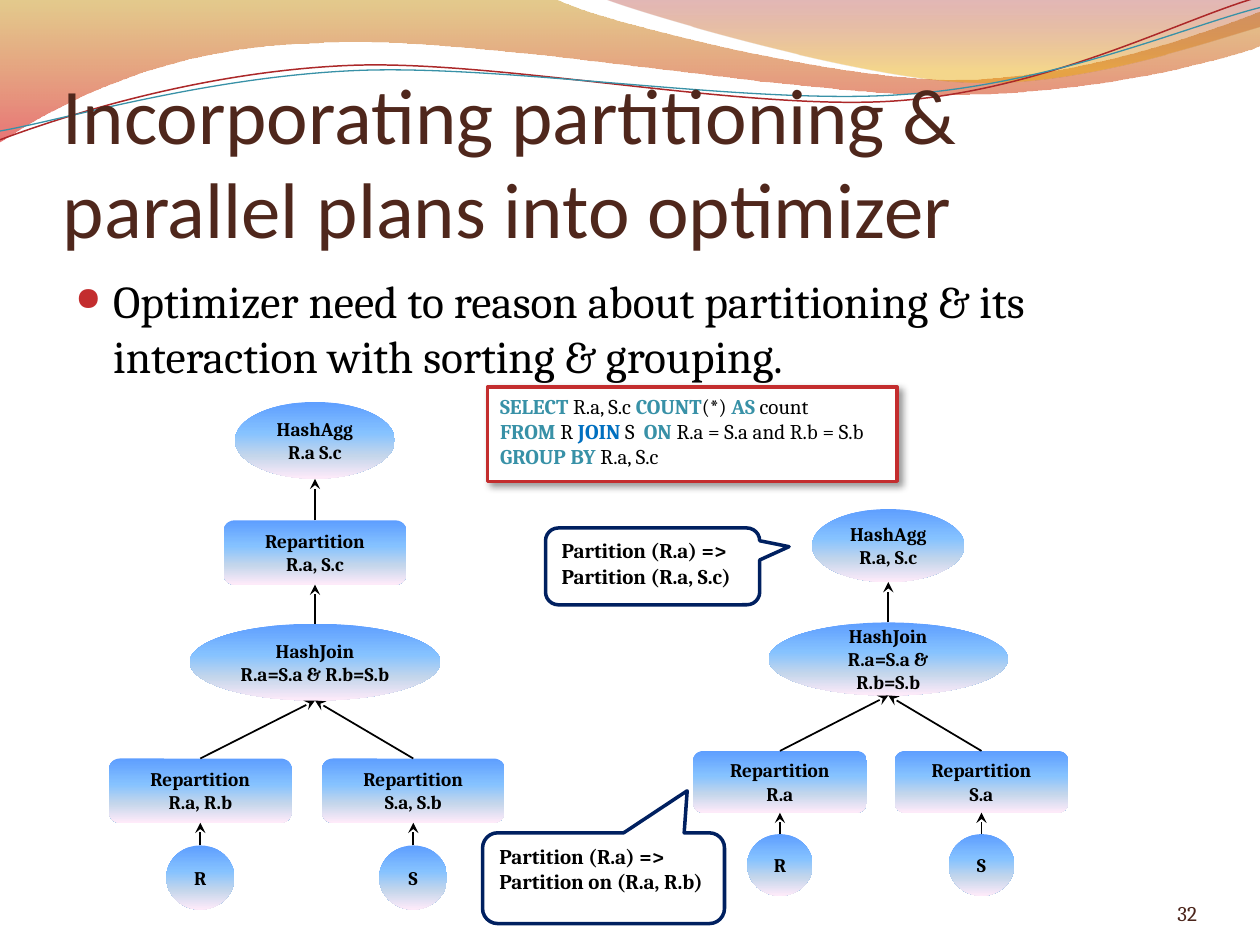
from lxml.etree import SubElement
from pptx import Presentation
from pptx.dml.color import RGBColor
from pptx.enum.shapes import MSO_CONNECTOR, MSO_SHAPE as SHAPE
from pptx.enum.text import MSO_ANCHOR as ANCHOR, PP_ALIGN as ALIGN
from pptx.oxml.ns import qn
from pptx.util import Inches, Pt

BLACK = RGBColor(0x00, 0x00, 0x00)
WHITE = RGBColor(0xFF, 0xFF, 0xFF)
BROWN = RGBColor(0x4F, 0x27, 0x1C)
DARK_BROWN = RGBColor(0x4B, 0x25, 0x1B)
RED = RGBColor(0xC3, 0x2D, 0x2E)
WAVE_RED = RGBColor(0xAC, 0x28, 0x29)
TEAL = RGBColor(0x38, 0x91, 0xA7)
BLUE = RGBColor(0x00, 0x70, 0xC0)
NAVY = RGBColor(0x00, 0x20, 0x60)
GOLD = RGBColor(0xC3, 0x8B, 0x00)
CRIMSON = RGBColor(0xD6, 0x03, 0x05)
MAROON = RGBColor(0xA1, 0x11, 0x12)
AMBER = RGBColor(0xE9, 0xA6, 0x00)
NODE_STOPS = [
    (0, RGBColor(0x5E, 0x9E, 0xFF), 100),
    (40, RGBColor(0x85, 0xC2, 0xFF), 100),
    (70, RGBColor(0xC4, 0xD6, 0xEB), 100),
    (100, RGBColor(0xFF, 0xEB, 0xFA), 100),
]


def write(shape, text, size=12, font="Cambria", color=BLACK, bold=False,
          accent=None, align=ALIGN.LEFT, anchor=ANCHOR.TOP, insets=(0.1, 0.05, 0.1, 0.05)):
    frame = shape.text_frame
    frame.word_wrap = True
    frame.vertical_anchor = anchor
    (frame.margin_left, frame.margin_top,
     frame.margin_right, frame.margin_bottom) = map(Inches, insets)
    for number, line in enumerate(text.split("\n")):
        paragraph = frame.add_paragraph() if number else frame.paragraphs[0]
        paragraph.alignment = align
        for index, piece in enumerate(line.split("|")):
            if piece:
                run = paragraph.add_run()
                run.text = piece
                run.font.size = Pt(size)
                run.font.name = font
                accented = accent is not None and index % 2 == 1
                run.font.bold = bold or accented
                run.font.color.rgb = accent if accented else color
    return frame


def shade(shape, stops):
    shape.fill.gradient()
    shape.fill.gradient_angle = 270
    stop_list = shape._element.spPr.find(qn("a:gradFill")).find(qn("a:gsLst"))
    for old in list(stop_list):
        stop_list.remove(old)
    for position, color, opacity in stops:
        stop = SubElement(stop_list, qn("a:gs"), pos=str(position * 1000))
        tone = SubElement(stop, qn("a:srgbClr"), val=str(color))
        if opacity < 100:
            SubElement(tone, qn("a:alpha"), val=str(opacity * 1000))


prs = Presentation()
prs.slide_width, prs.slide_height = Inches(10), Inches(7.5)
slide = prs.slides.add_slide(prs.slide_layouts[6])
shapes = slide.shapes

waves = [
    ([(0, 0), (4.4, -0.01), (4.76, 0.17, 6.64, 0.63, 7.58, 0.63),
      (8.53, 0.63, 9.58, 0.26, 10, 0.09), (10.01, 0.36),
      (9.83, 0.44, 8.7, 0.76, 7.46, 0.75), (6.22, 0.75, 3.82, 0.28, 2.57, 0.34),
      (1.29, 0.36, 0.46, 0.83, -0.01, 1.13)], [(0, GOLD, 45), (100, CRIMSON, 55)], None, 0),
    ([(4.79, -0.01), (5.09, 0.11, 6.82, 0.62, 7.69, 0.65),
      (8.56, 0.69, 9.61, 0.32, 10, 0.21), (10, 0)],
     [(0, MAROON, 30), (80, AMBER, 45)], None, 0),
    ([(0, 1.11), (0.48, 0.93, 1.58, 0.57, 2.77, 0.52), (3.95, 0.47, 5.93, 0.89, 7.13, 0.8),
      (8.33, 0.71, 9.38, 0.15, 9.98, -0.02)], None, WAVE_RED, 0.85),
    ([(0, 1.04), (0.47, 0.96, 1.64, 0.61, 2.83, 0.56), (4.03, 0.51, 5.97, 0.84, 7.17, 0.75),
      (8.36, 0.67, 9.41, 0.21, 10, 0.06)], None, TEAL, 0.75),
]
for (start, *segments), stops, stroke, weight in waves:
    builder = shapes.build_freeform(Inches(start[0]), Inches(start[1]))
    for segment in segments:
        vertices = [(Inches(x), Inches(y)) for x, y in zip(segment[::2], segment[1::2])]
        builder.add_line_segments(vertices, close=False)
    if stops:
        builder.add_line_segments([], close=True)
    wave = builder.convert_to_shape()
    straights = list(wave._element.iter(qn("a:lnTo")))
    for segment in segments:
        first, *others = straights[:len(segment) // 2]
        straights = straights[len(segment) // 2:]
        if others:
            curve = SubElement(first.getparent(), qn("a:cubicBezTo"))
            first.addprevious(curve)
            for straight in (first, *others):
                curve.append(straight[0])
                straight.getparent().remove(straight)
    wave.shadow.inherit = False
    if stops:
        shade(wave, stops)
        wave.line.fill.background()
    else:
        wave.fill.background()
        wave.line.color.rgb = stroke
        wave.line.width = Pt(weight)

title = shapes.add_textbox(Inches(0.5), Inches(0.77), Inches(9), Inches(1.25))
write(title, "Incorporating partitioning & parallel plans into optimizer", size=45,
      font="Calibri", color=BROWN, anchor=ANCHOR.BOTTOM, insets=(0, 0.05, 0, 0))

body = shapes.add_textbox(Inches(0.5), Inches(2.12), Inches(9), Inches(1.13))
point = write(body, "Optimizer need to reason about partitioning & its interaction "
                    "with sorting & grouping.", size=26).paragraphs[0]
bullet = point._p.get_or_add_pPr()
bullet.set("marL", str(Inches(0.3)))
bullet.set("indent", str(-Inches(0.3)))
SubElement(SubElement(bullet, qn("a:buClr")), qn("a:srgbClr"), val=str(RED))
SubElement(bullet, qn("a:buSzPct"), val="72000")
SubElement(bullet, qn("a:buChar"), char="●")

query = shapes.add_shape(SHAPE.RECTANGLE, Inches(3.87), Inches(3.07), Inches(3.25), Inches(0.75))
query.fill.solid()
query.fill.fore_color.rgb = WHITE
query.line.color.rgb = RED
query.line.width = Pt(2)
query.shadow.inherit = False
shadow = SubElement(query._element.spPr.find(qn("a:effectLst")), qn("a:outerShdw"),
                    blurRad=str(Pt(4)), dist=str(Pt(3)), dir="2700000", algn="tl", rotWithShape="0")
SubElement(SubElement(shadow, qn("a:srgbClr"), val=str(BLACK)), qn("a:alpha"), val="40000")
sql = write(query, "|SELECT |R.a, S.c |COUNT|(*) |AS| count\n"
                   "|FROM |R |JOIN |S  |ON |R.a = S.a and R.b = S.b\n"
                   "|GROUP BY |R.a, S.c", accent=TEAL)
sql.paragraphs[1].runs[2].font.color.rgb = BLUE

OVAL, BOX = SHAPE.OVAL, SHAPE.ROUNDED_RECTANGLE
early_plan = [
    (OVAL, "HashAgg\nR.a S.c", 2.5, 3.19, 1.27, 0.61, None),
    (BOX, "Repartition\nR.a, S.c", 2.5, 4.13, 1.45, 0.51, 0),
    (OVAL, "HashJoin\nR.a=S.a & R.b=S.b", 2.5, 4.95, 1.99, 0.61, 1),
    (BOX, "Repartition\nR.a, R.b", 1.59, 6.02, 1.45, 0.51, 2),
    (BOX, "Repartition\nS.a, S.b", 3.28, 6.02, 1.45, 0.51, 2),
    (OVAL, "R", 1.59, 6.71, 0.54, 0.51, 3),
    (OVAL, "S", 3.28, 6.71, 0.54, 0.51, 4),
]
merged_plan = [
    (OVAL, "HashAgg\nR.a, S.c", 7.05, 4.04, 1.21, 0.58, None),
    (OVAL, "HashJoin\nR.a=S.a & R.b=S.b", 7.05, 4.94, 1.9, 0.58, 0),
    (BOX, "Repartition\nR.a", 6.19, 5.96, 1.38, 0.49, 1),
    (BOX, "Repartition\nS.a", 7.79, 5.96, 1.38, 0.49, 1),
    (OVAL, "R", 6.19, 6.62, 0.52, 0.49, 2),
    (OVAL, "S", 7.79, 6.62, 0.52, 0.49, 3),
]
for plan in (early_plan, merged_plan):
    for kind, label, center, top, width, height, parent in plan:
        node = shapes.add_shape(kind, Inches(center - width / 2), Inches(top),
                                Inches(width), Inches(height))
        node.shadow.inherit = False
        node.line.fill.background()
        shade(node, NODE_STOPS)
        write(node, label, size=11, bold=True, align=ALIGN.CENTER, anchor=ANCHOR.MIDDLE)
    for kind, label, center, top, width, height, parent in plan:
        if parent is None:
            continue
        _, _, parent_center, parent_top, _, parent_height, _ = plan[parent]
        arrow = shapes.add_connector(MSO_CONNECTOR.STRAIGHT, Inches(center), Inches(top),
                                     Inches(parent_center), Inches(parent_top + parent_height))
        arrow.line.color.rgb = BLACK
        arrow.line.width = Pt(1)
        SubElement(arrow.line._get_or_add_ln(), qn("a:tailEnd"), type="stealth")
        SubElement(arrow._element.spPr, qn("a:effectLst"))

callouts = [
    ("Partition (R.a) => Partition on (R.a, R.b)", 3.83, 6.61, 1.92, 0.72, (0.346, -0.964)),
    ("Partition (R.a) => Partition (R.a, S.c)", 4.33, 4.19, 1.7, 0.61, (0.637, -0.256)),
]
for remark, left, top, width, height, tip in callouts:
    callout = shapes.add_shape(SHAPE.ROUNDED_RECTANGULAR_CALLOUT, Inches(left), Inches(top),
                               Inches(width), Inches(height))
    callout.adjustments[0], callout.adjustments[1] = tip
    callout.shadow.inherit = False
    callout.fill.background()
    callout.line.color.rgb = NAVY
    callout.line.width = Pt(2)
    write(callout, remark, bold=True)

page_number = shapes.add_textbox(Inches(8.67), Inches(6.95), Inches(0.83), Inches(0.4))
write(page_number, "32", color=DARK_BROWN, align=ALIGN.RIGHT, anchor=ANCHOR.BOTTOM,
      insets=(0, 0, 0, 0))

prs.save("out.pptx")
